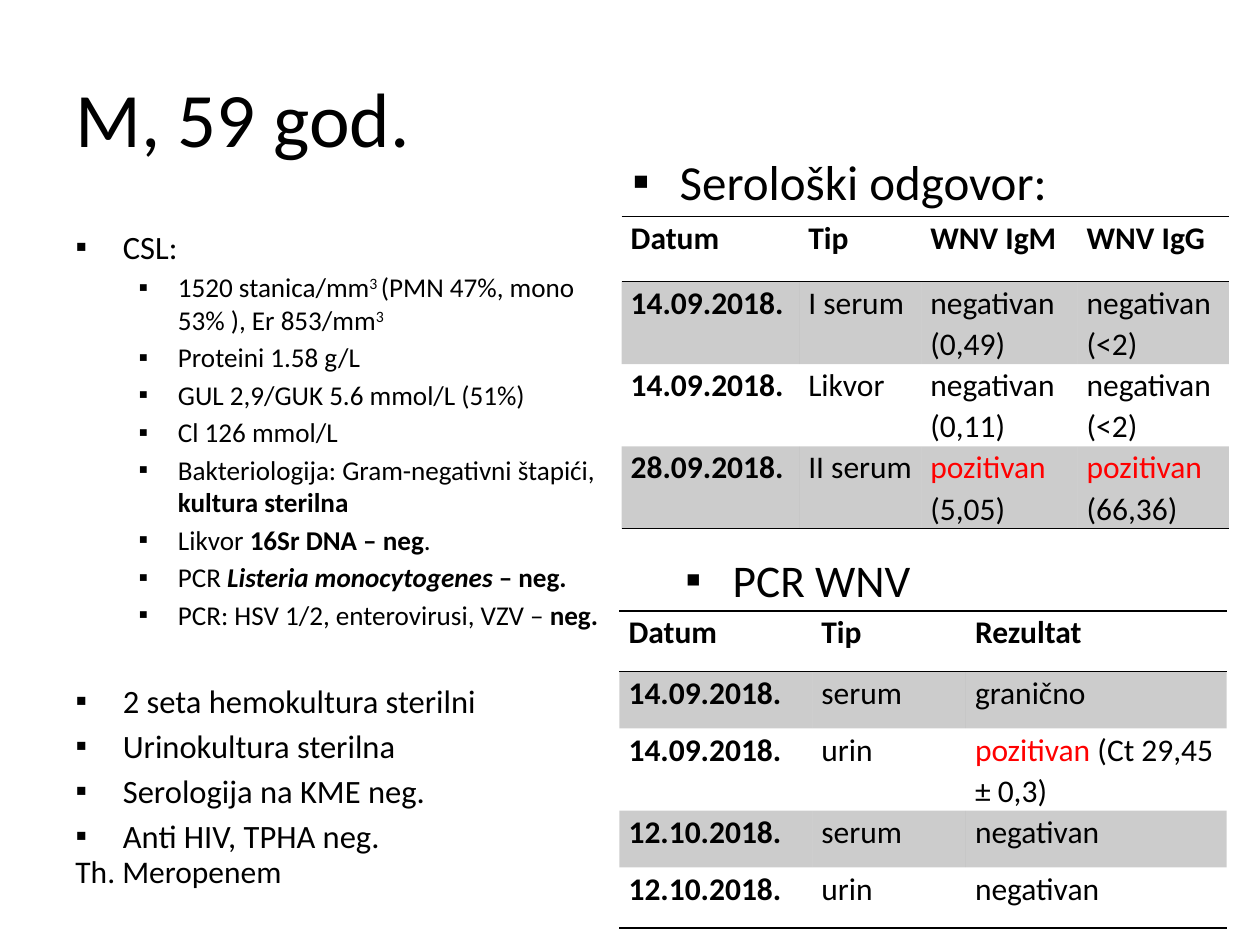
"""Build a case slide with lab findings, serology and PCR tables."""
import pptx
import pptx.dml.color
import pptx.enum.text
import pptx.oxml.ns
import pptx.util
from lxml import etree

Pt = pptx.util.Pt
qn = pptx.oxml.ns.qn
ANCHOR = pptx.enum.text.MSO_ANCHOR
NO_STYLE = "{2D5ABB26-0587-4C30-8999-92F81FD0307C}"


def add_runs(p, runs, size):
    """Add (text, flags) runs; flags: b bold, i italic, ^ superscript, r red."""
    for text, flags in runs:
        r = p.add_run()
        r.text = text
        r.font.name = "Calibri"
        r.font.size = Pt(size)
        r.font.bold = "b" in flags
        r.font.italic = "i" in flags
        color = "FF0000" if "r" in flags else "000000"
        r.font.color.rgb = pptx.dml.color.RGBColor.from_string(color)
        if "^" in flags:
            r.font._element.set("baseline", "30000")


def add_bullets(sp, box, items):
    """Place a body placeholder and fill it with (level, size, space, runs) items."""
    sp.left, sp.top, sp.width, sp.height = [Pt(v) for v in box]
    tf = sp.text_frame
    tf.word_wrap = True
    tf.auto_size = pptx.enum.text.MSO_AUTO_SIZE.NONE
    tf.vertical_anchor = ANCHOR.TOP
    for i, (level, size, space, runs) in enumerate(items):
        p = tf.add_paragraph() if i else tf.paragraphs[0]
        p.level = level
        p.space_before = Pt(space)
        margin, indent = [(27, -27), (58.5, -22.5)][level]
        pPr = p._p.get_or_add_pPr()
        pPr.set("marL", str(Pt(margin)))
        pPr.set("indent", str(Pt(indent)))
        etree.SubElement(pPr, qn("a:buFont")).set("typeface", "Arial")
        etree.SubElement(pPr, qn("a:buChar")).set("char", "▪")
        add_runs(p, runs, size)


prs = pptx.Presentation()
prs.slide_width, prs.slide_height = Pt(720), Pt(540)
s = prs.slides.add_slide(prs.slide_layouts[4])
ph = {sp.placeholder_format.idx: sp for sp in s.placeholders}
ph[4]._element.getparent().remove(ph[4]._element)

title = ph[0]
title.left, title.top, title.width, title.height = Pt(36), Pt(21.6), Pt(648), Pt(90)
title.text_frame.vertical_anchor = ANCHOR.MIDDLE
p = title.text_frame.paragraphs[0]
p.alignment = pptx.enum.text.PP_ALIGN.LEFT
add_runs(p, [("M, 59 god.", "")], 44)

csf = [
    [("1520 stanica/mm", ""), ("3 ", "^"), ("(PMN 47%, mono 53% ), Er 853/mm", ""), ("3", "^")],
    [("Proteini 1.58 g/L", "")],
    [("GUL 2,9/GUK 5.6 mmol/L (51%)", "")],
    [("Cl 126 mmol/L", "")],
    [("Bakteriologija: Gram-negativni štapići, ", ""), ("kultura sterilna", "b")],
    [("Likvor ", ""), ("16Sr DNA – neg", "b"), (".", "")],
    [("PCR ", ""), ("Listeria monocytogenes ", "bi"), ("– neg.", "b")],
    [("PCR: HSV 1/2, enterovirusi, VZV – ", ""), ("neg.", "b")],
]
other = ["2 seta hemokultura sterilni", "Urinokultura sterilna",
         "Serologija na KME neg.", "Anti HIV, TPHA neg."]
items = [(0, 18.6, 3.3, [("CSL:", "")])]
items += [(1, 15.5, 2.8, runs) for runs in csf]
items += [(0, 18.6, 3.3 if i else 29, [(text, "")]) for i, text in enumerate(other)]
add_bullets(ph[2], (36, 126, 318, 356.4), items)
add_bullets(ph[3], (384.5, 311.8, 175.7, 37.4), [(0, 25.9, 5.2, [("PCR WNV", "")])])
add_bullets(ph[1], (354.2, 82.8, 270.7, 43.9), [(0, 28, 5.6, [("Serološki odgovor:", "")])])

tables = [
    (354, 349.2, [110.2, 87.8, 149], [34.6, 32.4, 47, 32.4, 34.6], [
        ["Datum", "Tip", "Rezultat"],
        ["14.09.2018.", "serum", "granično"],
        ["14.09.2018.", "urin", "pozitivan (Ct 29,45 ± 0,3)"],
        ["12.10.2018.", "serum", "negativan"],
        ["12.10.2018.", "urin", "negativan"],
    ]),
    (355.2, 123.8, [101.5, 69.8, 89.3, 86.4], [37.2, 47, 47, 47], [
        ["Datum", "Tip", "WNV IgM", "WNV IgG"],
        ["14.09.2018.", "I serum", "negativan (0,49)", "negativan (<2)"],
        ["14.09.2018.", "Likvor", "negativan (0,11)", "negativan (<2)"],
        ["28.09.2018.", "II serum", "pozitivan (5,05)", "pozitivan (66,36)"],
    ]),
]
for left, top, widths, heights, rows in tables:
    frame = s.shapes.add_table(len(rows), len(widths), Pt(left), Pt(top),
                               Pt(sum(widths)), Pt(sum(heights)))
    table = frame.table
    table.horz_banding = False
    table._tbl.tblPr.find(qn("a:tableStyleId")).text = NO_STYLE
    for column, width in zip(table.columns, widths):
        column.width = Pt(width)
    for i, texts in enumerate(rows):
        table.rows[i].height = Pt(heights[i])
        edges = {0: ["a:lnB", "a:lnT"], len(rows) - 1: ["a:lnB"]}.get(i, [])
        for j, text in enumerate(texts):
            cell = table.cell(i, j)
            cell.margin_left = cell.margin_right = Pt(5.2)
            cell.margin_top = cell.margin_bottom = Pt(0)
            if i % 2:
                cell.fill.solid()
                cell.fill.fore_color.rgb = pptx.dml.color.RGBColor.from_string("000000")
                color = cell._tc.tcPr.find(".//" + qn("a:srgbClr"))
                etree.SubElement(color, qn("a:alpha")).set("val", "20000")
            else:
                cell.fill.background()
            for edge in edges:
                ln = etree.Element(qn(edge), w=str(Pt(1)))
                fill = etree.SubElement(ln, qn("a:solidFill"))
                etree.SubElement(fill, qn("a:srgbClr")).set("val", "000000")
                cell._tc.tcPr.insert(0, ln)
            p = cell.text_frame.paragraphs[0]
            p.line_spacing = 1.07
            runs = [(text, "b" if i == 0 or j == 0 else "")]
            if text.startswith("pozitivan "):
                runs = [("pozitivan ", "r"), (text.removeprefix("pozitivan "), "")]
            add_runs(p, runs, 18)

sp = s.shapes.add_textbox(Pt(36), Pt(483.1), Pt(138.2), Pt(28.8))
sp.text_frame.word_wrap = False
add_runs(sp.text_frame.paragraphs[0], [("Th. Meropenem", "")], 18)

prs.save("out.pptx")
